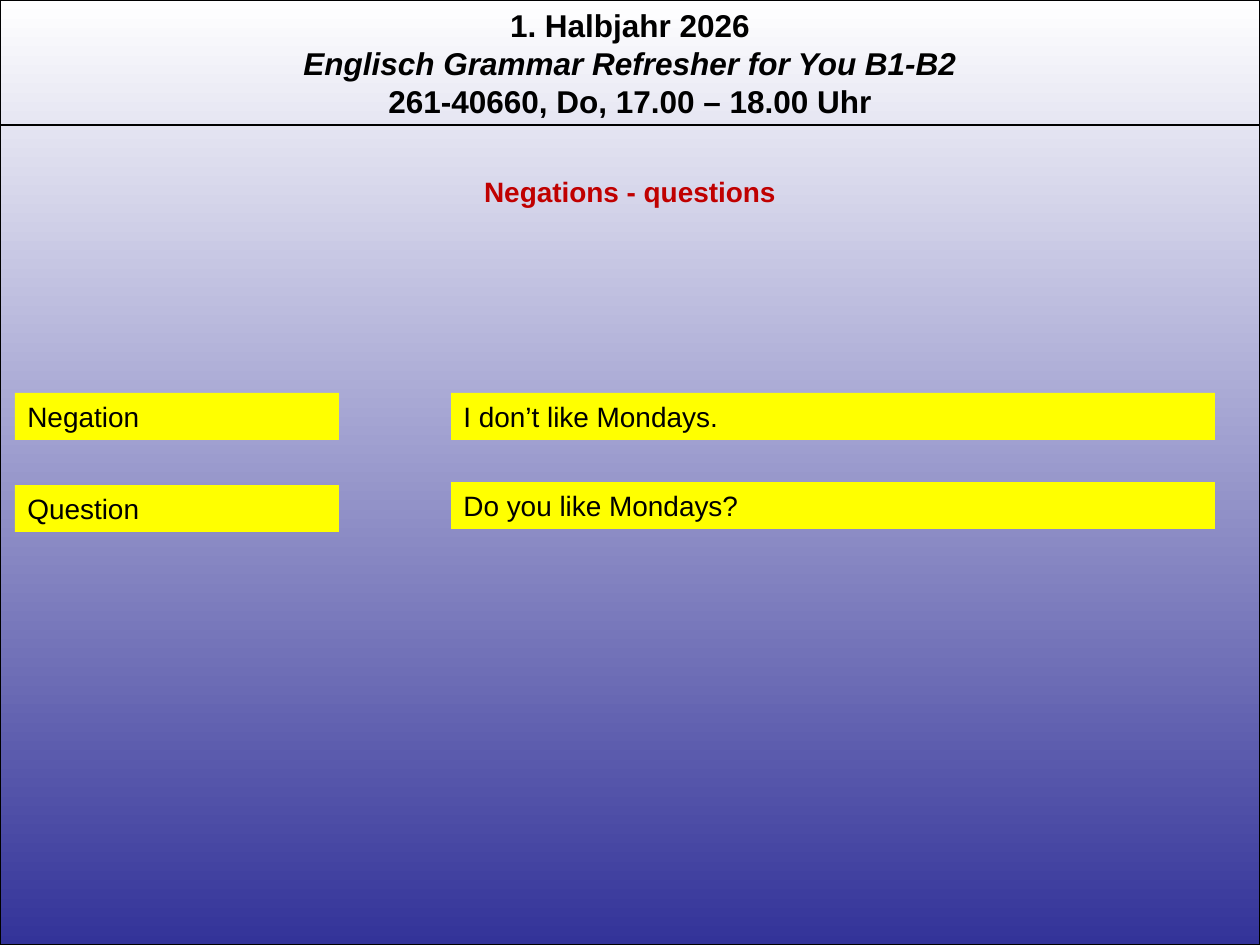
from dataclasses import dataclass

from lxml.etree import SubElement
from pptx import Presentation
from pptx.dml.color import RGBColor
from pptx.enum.shapes import MSO_CONNECTOR, MSO_SHAPE
from pptx.enum.text import MSO_ANCHOR, MSO_AUTO_SIZE, PP_ALIGN
from pptx.oxml.ns import qn
from pptx.util import Emu, Pt

EMU_PER_PX = 914400 / 126
WIDTH, HEIGHT = 1260, 945


@dataclass(frozen=True)
class Theme:
    font: str = "Arial"
    ink: RGBColor = RGBColor(0x00, 0x00, 0x00)
    accent: RGBColor = RGBColor(0xC0, 0x00, 0x00)
    highlight: RGBColor = RGBColor(0xFF, 0xFF, 0x00)
    sky_top: RGBColor = RGBColor(0xFF, 0xFF, 0xFF)
    sky_bottom: RGBColor = RGBColor(0x33, 0x33, 0x99)
    heading: Pt = Pt(18)
    body: Pt = Pt(16)
    rule: Pt = Pt(0.75)


def px(*lengths):
    return [Emu(round(length * EMU_PER_PX)) for length in lengths]


class SlideBuilder:
    """Holds the theme and the page that elements are added to."""

    def __init__(self, page, theme):
        self.page = page
        self.theme = theme

    def set_text(self, shape, lines, align=PP_ALIGN.LEFT, colour=None, **common):
        """Fill a shape with (text, format) lines that share common formats."""
        frame = shape.text_frame
        frame_format = {
            "word_wrap": True,
            "auto_size": MSO_AUTO_SIZE.SHAPE_TO_FIT_TEXT,
            "vertical_anchor": MSO_ANCHOR.TOP,
        }
        for name, value in frame_format.items():
            setattr(frame, name, value)
        for index, (text, special) in enumerate(lines):
            para = frame.add_paragraph() if index else frame.paragraphs[0]
            para.alignment = align
            span = para.add_run()
            span.text = text
            font_format = {"name": self.theme.font, "size": self.theme.body}
            for name, value in (font_format | common | special).items():
                setattr(span.font, name, value)
            span.font.color.rgb = colour or self.theme.ink

    def rectangle(self, *place):
        shape = self.page.shapes.add_shape(MSO_SHAPE.RECTANGLE, *px(*place))
        shape.shadow.inherit = False
        return shape

    def backdrop(self):
        panel = self.rectangle(0, 0, WIDTH, HEIGHT)
        panel.fill.gradient()
        panel.fill.gradient_angle = 270
        colours = (self.theme.sky_top, self.theme.sky_bottom)
        for stop, position, colour in zip(panel.fill.gradient_stops, (0, 1), colours):
            stop.position = position
            stop.color.rgb = colour
        panel.line.color.rgb = self.theme.ink
        panel.line.width = self.theme.rule

    def course_heading(self, lines, *place):
        box = self.page.shapes.add_textbox(*px(*place))
        self.set_text(box, lines, PP_ALIGN.CENTER, size=self.theme.heading, bold=True)

    def divider(self, top):
        line = self.page.shapes.add_connector(
            MSO_CONNECTOR.STRAIGHT, *px(0, top, WIDTH, top))
        line.line.color.rgb = self.theme.ink
        line.line.width = self.theme.rule
        SubElement(line.element.spPr, qn("a:effectLst"))

    def title(self, text, *place):
        """Place the title and bring it in front of the backdrop."""
        title = self.page.shapes.title
        self.page.shapes.element.append(title.element)
        for name, value in zip(("left", "top", "width", "height"), px(*place)):
            setattr(title, name, value)
        self.set_text(title, [(text, {})], PP_ALIGN.CENTER, self.theme.accent, bold=True)

    def label(self, text, *place):
        box = self.rectangle(*place)
        box.fill.solid()
        box.fill.fore_color.rgb = self.theme.highlight
        box.line.fill.background()
        self.set_text(box, [(text, {})])


def main():
    deck = Presentation()
    deck.slide_width, deck.slide_height = px(WIDTH, HEIGHT)
    title_only = deck.slide_layouts[5]
    slide = SlideBuilder(deck.slides.add_slide(title_only), Theme())

    slide.backdrop()
    slide.course_heading([
        ("1. Halbjahr 2026", {}),
        ("Englisch Grammar Refresher for You B1-B2", {"italic": True}),
        ("261-40660, Do, 17.00 – 18.00 Uhr", {}),
    ], 0, 0, WIDTH, 127)
    slide.divider(125)
    slide.title("Negations - questions", 0, 168, WIDTH, 47)

    label_height = 47
    examples = [
        ("Negation", 393, "I don’t like Mondays.", 393),
        ("Question", 485, "Do you like Mondays?", 482),
    ]
    for term, term_top, sentence, sentence_top in examples:
        slide.label(term, 15, term_top, 324, label_height)
        slide.label(sentence, 451, sentence_top, 764, label_height)

    deck.save("out.pptx")


if __name__ == "__main__":
    main()
